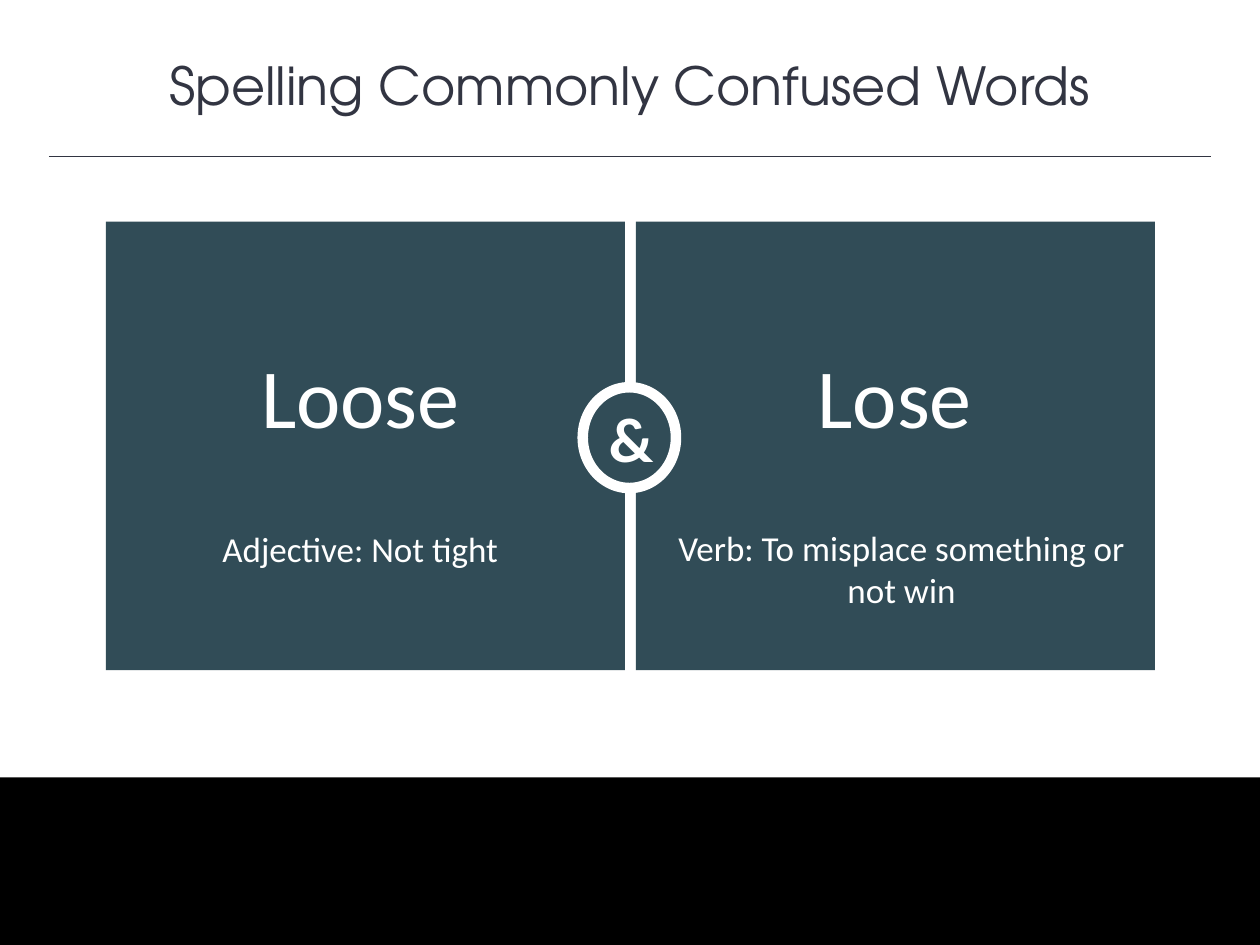
"""Build a slide that sets two commonly confused words side by side."""
from dataclasses import dataclass

from lxml import etree
from pptx import Presentation
from pptx.dml.color import RGBColor
from pptx.enum.shapes import MSO_CONNECTOR, MSO_SHAPE
from pptx.enum.text import MSO_ANCHOR, MSO_AUTO_SIZE, PP_ALIGN
from pptx.oxml.ns import qn
from pptx.util import Pt

RECT, OVAL = MSO_SHAPE.RECTANGLE, MSO_SHAPE.OVAL
STRAIGHT = MSO_CONNECTOR.STRAIGHT
TOP, MIDDLE = MSO_ANCHOR.TOP, MSO_ANCHOR.MIDDLE
GROW, FIXED = MSO_AUTO_SIZE.SHAPE_TO_FIT_TEXT, MSO_AUTO_SIZE.NONE
CENTER = PP_ALIGN.CENTER


@dataclass(frozen=True)
class Theme:
    ink: str = "323542"
    panel: str = "314C57"
    light: str = "FFFFFF"
    dark: str = "000000"
    head: str = "TeX Gyre Adventor"
    body: str = "Calibri"
    title: float = 30
    word: float = 48
    sign: float = 36
    note: float = 20


@dataclass(frozen=True)
class Box:
    left: float
    top: float
    width: float
    height: float

    def lengths(self) -> tuple:
        return Pt(self.left), Pt(self.top), Pt(self.width), Pt(self.height)


@dataclass(frozen=True)
class Card:
    word: str
    note: str
    panel: Box
    label: Box
    foot: Box


THEME = Theme()
WIDTH, HEIGHT = 720, 540
CARDS = (
    Card("Loose", "Adjective: Not tight",
         Box(60.5, 126.7, 296.6, 256.3),
         Box(87.8, 168.5, 236.2, 85.7),
         Box(87.8, 297.4, 236.2, 31.7)),
    Card("Lose", "Verb: To misplace something or not win",
         Box(363.4, 126.7, 296.6, 256.3),
         Box(393.1, 168.5, 236.2, 85.7),
         Box(375.1, 297.4, 280.1, 55.4)),
)


def write(shape, text: str, *, size: float, font: str = THEME.body,
          color: str = THEME.light, bold: bool = False, anchor=MIDDLE,
          fit=GROW, pitch: float | None = None) -> None:
    frame = shape.text_frame
    frame.word_wrap = True
    frame.auto_size = fit
    frame.vertical_anchor = anchor
    para = frame.paragraphs[0]
    para.alignment = CENTER
    if pitch:
        para.line_spacing = pitch
    run = para.add_run()
    run.text = text
    run.font.name = font
    run.font.size = Pt(size)
    run.font.bold = bold
    run.font.color.rgb = RGBColor.from_string(color)


def block(slide, box: Box, fill: str, kind=RECT, edge: float = 0):
    shape = slide.shapes.add_shape(kind, *box.lengths())
    shape.shadow.inherit = False
    shape.fill.solid()
    shape.fill.fore_color.rgb = RGBColor.from_string(fill)
    if edge:
        shape.line.color.rgb = RGBColor.from_string(THEME.light)
        shape.line.width = Pt(edge)
    else:
        shape.line.fill.background()
    return shape


def label(slide, box: Box, text: str, **style) -> None:
    write(slide.shapes.add_textbox(*box.lengths()), text, **style)


def rule(slide, left: float, top: float, right: float) -> None:
    line = slide.shapes.add_connector(
        STRAIGHT, Pt(left), Pt(top), Pt(right), Pt(top))
    line.line.color.rgb = RGBColor.from_string(THEME.ink)
    line.line.width = Pt(1)
    etree.SubElement(line._element.spPr, qn("a:effectLst"))


def main() -> None:
    deck = Presentation()
    deck.slide_width, deck.slide_height = Pt(WIDTH), Pt(HEIGHT)
    slide = deck.slides.add_slide(deck.slide_layouts[6])

    label(slide, Box(0, 26.6, WIDTH, 43.9), "Spelling Commonly Confused Words",
          size=THEME.title, font=THEME.head, color=THEME.ink, anchor=TOP)
    block(slide, Box(0, 444.2, WIDTH, 95.8), THEME.dark)
    rule(slide, 28, 89.5, WIDTH - 28)

    for card in CARDS:
        block(slide, card.panel, THEME.panel)
    badge = block(slide, Box(333, 221.3, 53.3, 57.6), THEME.panel, OVAL, 6)
    write(badge, "&", size=THEME.sign, bold=True, fit=FIXED)
    for card in CARDS:
        write(block(slide, card.label, THEME.panel), card.word,
              size=THEME.word, pitch=1.5)
        label(slide, card.foot, card.note, size=THEME.note)

    deck.save("out.pptx")


if __name__ == "__main__":
    main()
